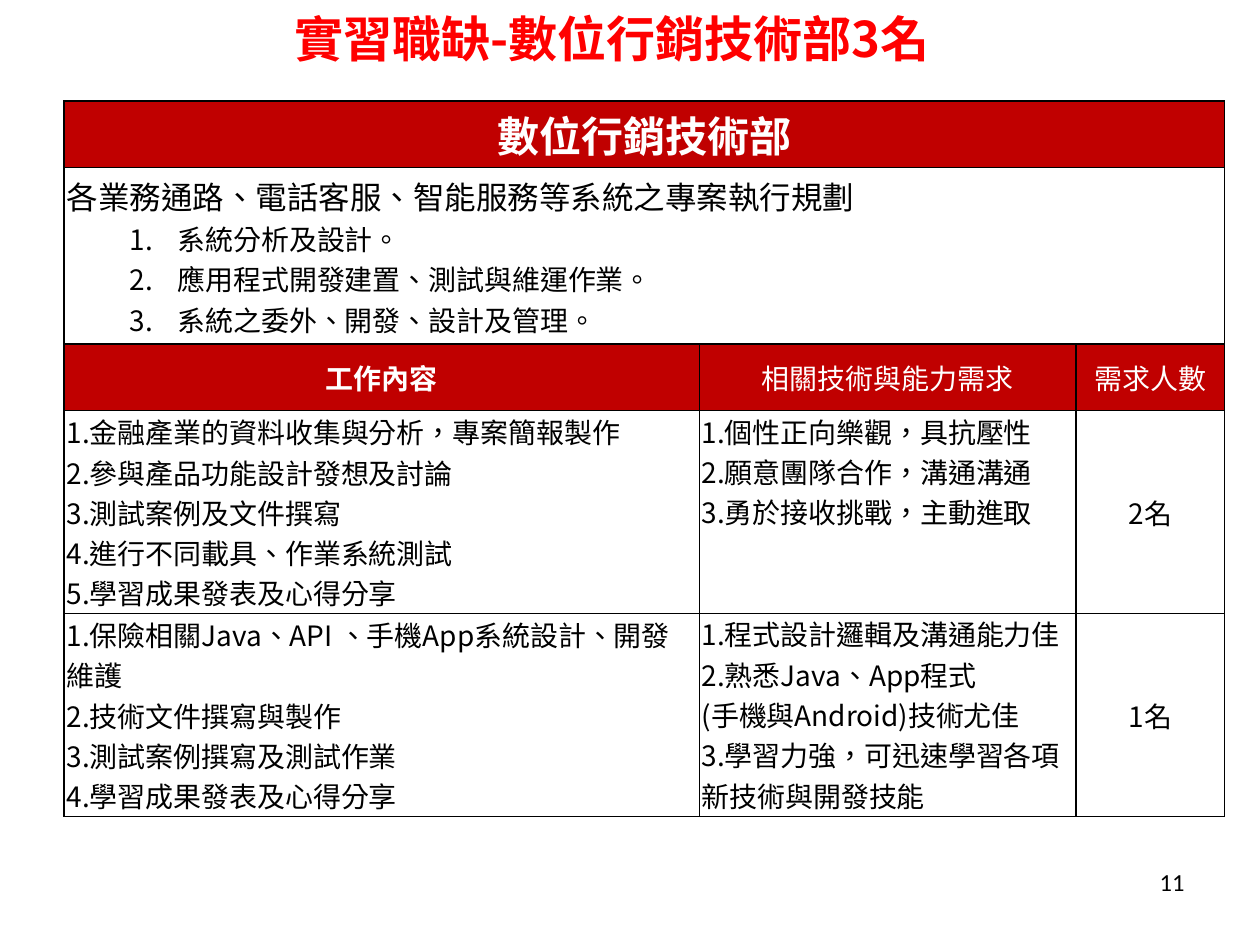
from lxml.etree import SubElement
from pptx import Presentation
from pptx.dml.color import RGBColor
from pptx.enum.text import MSO_ANCHOR, MSO_AUTO_SIZE, PP_ALIGN
from pptx.oxml.ns import qn
from pptx.util import Inches, Pt

CJK = "Noto Sans CJK SC"
RED, WHITE, BLACK = "C00000", "FFFFFF", "000000"
GRID_COLUMNS, GRID_ROWS = 100, 75


def colour(code):
    return RGBColor.from_string(code)


class SlideBuilder:
    def __init__(self, deck):
        self.deck = deck
        self.page = deck.slides.add_slide(deck.slide_layouts[5])

    def across(self, columns):
        return round(self.deck.slide_width * columns / GRID_COLUMNS)

    def down(self, rows):
        return round(self.deck.slide_height * rows / GRID_ROWS)

    def area(self, left, top, width, height):
        return self.across(left), self.down(top), self.across(width), self.down(height)

    def style(self, paragraph, size, code, bold=False, align=PP_ALIGN.LEFT, font=CJK):
        paragraph.alignment = align
        for span in paragraph.runs:
            span.font.name = font
            span.font.size = Pt(size)
            span.font.bold = bold
            span.font.color.rgb = colour(code)
            properties = span.font._element
            properties.set("lang", "zh-TW")
            SubElement(properties, qn("a:ea"), typeface=font)

    def title(self, text, *place):
        box = self.page.shapes.title
        box.left, box.top, box.width, box.height = self.area(*place)
        frame = box.text_frame
        frame.text = text
        frame.auto_size = MSO_AUTO_SIZE.NONE
        frame.vertical_anchor = MSO_ANCHOR.MIDDLE
        self.style(frame.paragraphs[0], 28, "FF0000", bold=True)

    def page_number(self, text, *place):
        box = self.page.shapes.add_textbox(*self.area(*place))
        frame = box.text_frame
        frame.word_wrap = True
        frame.text = text
        self.style(frame.paragraphs[0], 14, BLACK, align=PP_ALIGN.RIGHT, font="Calibri")

    def table(self, left, top, widths, heights):
        place = self.area(left, top, sum(widths), sum(heights))
        table = self.page.shapes.add_table(len(heights), len(widths), *place).table
        for column, width in zip(table.columns, widths):
            column.width = self.across(width)
        for row, height in zip(table.rows, heights):
            row.height = self.down(height)
        for cell in table.iter_cells():
            self.border(cell)
            cell.fill.background()
        return table

    def border(self, cell):
        properties = cell._tc.get_or_add_tcPr()
        for side in ("lnL", "lnR", "lnT", "lnB"):
            line = SubElement(properties, qn(f"a:{side}"), w=str(Pt(1)))
            fill = SubElement(line, qn("a:solidFill"))
            SubElement(fill, qn("a:srgbClr"), val=BLACK)

    def cell(self, cell, lines, size=16, code=BLACK, fill=None, bold=False,
             align=PP_ALIGN.LEFT, anchor=MSO_ANCHOR.MIDDLE):
        cell.margin_left = cell.margin_right = Inches(0.02)
        cell.margin_top = cell.margin_bottom = 0
        cell.vertical_anchor = anchor
        if fill:
            cell.fill.solid()
            cell.fill.fore_color.rgb = colour(fill)
        cell.text_frame.text = "\n".join(lines)
        for paragraph in cell.text_frame.paragraphs:
            self.style(paragraph, size, code, bold, align)

    def number(self, paragraph):
        paragraph.level = 1
        properties = paragraph._p.get_or_add_pPr()
        properties.set("marL", str(Inches(0.88)))
        properties.set("indent", str(Inches(-0.38)))
        SubElement(properties, qn("a:buAutoNum"), type="arabicPeriod")


def main():
    deck = Presentation()
    deck.slide_width, deck.slide_height = Inches(10), Inches(7.5)
    slide = SlideBuilder(deck)
    slide.title("實習職缺-數位行銷技術部3名", 22.4, 0, 74.8, 6)
    slide.page_number("11", 71.7, 68.3, 23.3, 5.2)

    table = slide.table(5.1, 8, [50.4, 29.9, 11.8], [5.3, 14, 5.3, 16.1, 16.1])
    for row in (0, 1):
        table.cell(row, 0).merge(table.cell(row, 2))

    heading = {"code": WHITE, "fill": RED, "align": PP_ALIGN.CENTER}
    slide.cell(table.cell(0, 0), ["數位行銷技術部"], size=24, bold=True, **heading)

    duties = [
        "各業務通路、電話客服、智能服務等系統之專案執行規劃",
        "系統分析及設計。",
        "應用程式開發建置、測試與維運作業。",
        "系統之委外、開發、設計及管理。",
    ]
    overview = table.cell(1, 0)
    slide.cell(overview, duties, fill=WHITE)
    summary, *tasks = overview.text_frame.paragraphs
    summary.runs[0].font.size = Pt(18)
    for task in tasks:
        slide.number(task)

    for column, text in enumerate(["工作內容", "相關技術與能力需求", "需求人數"]):
        slide.cell(table.cell(2, column), [text], bold=column == 0, **heading)

    openings = [
        (
            ["1.金融產業的資料收集與分析，專案簡報製作", "2.參與產品功能設計發想及討論",
             "3.測試案例及文件撰寫", "4.進行不同載具、作業系統測試", "5.學習成果發表及心得分享"],
            ["1.個性正向樂觀，具抗壓性", "2.願意團隊合作，溝通溝通", "3.勇於接收挑戰，主動進取"],
            "2名",
        ),
        (
            ["1.保險相關Java、API 、手機App系統設計、開發維護", "2.技術文件撰寫與製作",
             "3.測試案例撰寫及測試作業", "4.學習成果發表及心得分享"],
            ["1.程式設計邏輯及溝通能力佳", "2.熟悉Java、App程式",
             "(手機與Android)技術尤佳", "3.學習力強，可迅速學習各項新技術與開發技能"],
            "1名",
        ),
    ]
    for row, (work, skills, places) in enumerate(openings, start=3):
        slide.cell(table.cell(row, 0), work)
        slide.cell(table.cell(row, 1), skills, anchor=MSO_ANCHOR.TOP)
        slide.cell(table.cell(row, 2), [places], align=PP_ALIGN.CENTER)

    deck.save("out.pptx")


if __name__ == "__main__":
    main()
